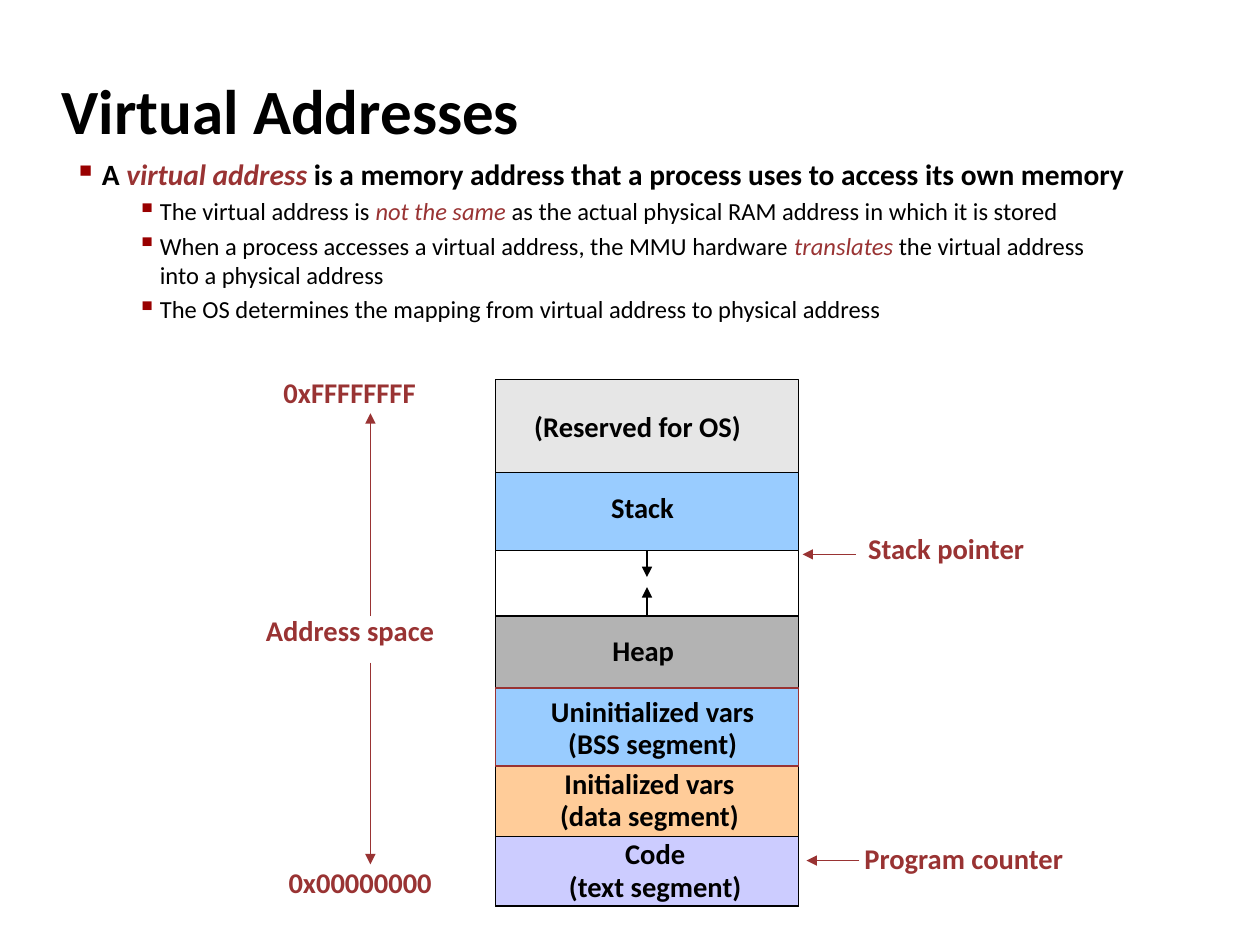
from dataclasses import dataclass
from itertools import accumulate

from lxml.etree import SubElement
from pptx import Presentation
from pptx.dml.color import RGBColor
from pptx.enum.shapes import MSO_CONNECTOR, MSO_SHAPE
from pptx.enum.text import MSO_ANCHOR, MSO_AUTO_SIZE, PP_ALIGN
from pptx.oxml.ns import qn
from pptx.util import Inches, Pt


@dataclass(frozen=True)
class Theme:
    """Colours, font and type sizes of the slide."""
    font: str = "Calibri"
    ink: str = "000000"
    accent: str = "993333"
    bullet: str = "990000"
    blue: str = "99CCFF"
    violet: str = "CCCCFF"
    orange: str = "FFCC99"
    grey: str = "B3B3B3"
    pale: str = "E6E6E6"
    title_size: float = 36
    point_size: float = 16.8
    detail_size: float = 14
    label_size: float = 16.3
    line_width: float = 0.75
    line_spacing: float = 0.94


class SlideBuilder:
    """Draws styled elements on the current slide."""

    def __init__(self, slide, theme):
        self.slide = slide
        self.theme = theme

    def run(self, paragraph, text, size, color, bold=True, italic=False):
        """Add one formatted run."""
        run = paragraph.add_run()
        run.text = text
        run.font.name = self.theme.font
        run.font.size = Pt(size)
        run.font.bold = bold
        run.font.italic = italic
        run.font.color.rgb = RGBColor.from_string(color)

    def title(self, text, left, top, width, height):
        """Place and fill the title placeholder."""
        heading = self.slide.shapes.title
        heading.left, heading.top = Inches(left), Inches(top)
        heading.width, heading.height = Inches(width), Inches(height)
        frame = heading.text_frame
        frame.auto_size = MSO_AUTO_SIZE.NONE
        frame.vertical_anchor = MSO_ANCHOR.MIDDLE
        paragraph = frame.paragraphs[0]
        paragraph.alignment = PP_ALIGN.LEFT
        paragraph.line_spacing = self.theme.line_spacing
        self.run(paragraph, text, self.theme.title_size, self.theme.ink)

    def text_frame(self, left, top, width, height):
        """Add a wrapping text box and return its frame."""
        frame = self.slide.shapes.add_textbox(
            Inches(left), Inches(top), Inches(width), Inches(height)).text_frame
        frame.word_wrap = True
        return frame

    def bullet(self, paragraph, level):
        """Give a paragraph the bullet and indent of its level."""
        margin, mark, percent = ((0.28, "■", 60), (0.74, "▪", 110))[level]
        paragraph.level = level
        properties = paragraph._p.get_or_add_pPr()
        properties.set("marL", str(Inches(margin)))
        properties.set("indent", str(Inches(-0.18)))
        spacing = SubElement(properties, qn("a:spcBef"))
        SubElement(spacing, qn("a:spcPct"), val="20000")
        color = SubElement(properties, qn("a:buClr"))
        SubElement(color, qn("a:srgbClr"), val=self.theme.bullet)
        SubElement(properties, qn("a:buSzPct"), val=str(percent * 1000))
        SubElement(properties, qn("a:buChar"), char=mark)

    def bullets(self, points, left, top, width, height):
        """Add points given as a level and parts, every second part stressed."""
        frame = self.text_frame(left, top, width, height)
        for index, (level, parts) in enumerate(points):
            paragraph = frame.add_paragraph() if index else frame.paragraphs[0]
            self.bullet(paragraph, level)
            size = self.theme.detail_size if level else self.theme.point_size
            for position, part in enumerate(parts):
                stressed = position % 2 == 1
                color = self.theme.accent if stressed else self.theme.ink
                self.run(paragraph, part, size, color, level == 0, stressed)

    def label(self, lines, left, top, width, color):
        """Add a bold label, centred when it has several lines."""
        frame = self.text_frame(left, top, width, 0.26 * len(lines))
        frame.margin_left = frame.margin_right = 0
        frame.margin_top = frame.margin_bottom = 0
        for index, line in enumerate(lines):
            paragraph = frame.add_paragraph() if index else frame.paragraphs[0]
            paragraph.alignment = PP_ALIGN.CENTER if len(lines) > 1 else PP_ALIGN.LEFT
            paragraph.line_spacing = self.theme.line_spacing
            self.run(paragraph, line, self.theme.label_size, color)

    def box(self, left, top, width, height, fill, line):
        """Add an outlined box, unfilled when fill is None."""
        box = self.slide.shapes.add_shape(
            MSO_SHAPE.ROUNDED_RECTANGLE,
            Inches(left), Inches(top), Inches(width), Inches(height))
        box.adjustments[0] = 0
        box.shadow.inherit = False
        if fill:
            box.fill.solid()
            box.fill.fore_color.rgb = RGBColor.from_string(fill)
        else:
            box.fill.background()
        box.line.color.rgb = RGBColor.from_string(line)
        box.line.width = Pt(self.theme.line_width)
        return box

    def arrow(self, start, end, color):
        """Add a straight arrow with its head at the end."""
        arrow = self.slide.shapes.add_connector(
            MSO_CONNECTOR.STRAIGHT, *map(Inches, start + end))
        arrow.line.color.rgb = RGBColor.from_string(color)
        arrow.line.width = Pt(self.theme.line_width)
        SubElement(arrow.line._get_or_add_ln(), qn("a:tailEnd"), type="triangle")
        SubElement(arrow._element.spPr, qn("a:effectLst"))
        return arrow


def draw_memory(builder):
    """Draw the stacked memory segments and the growth arrows."""
    theme = builder.theme
    left, top, width = 3.93, 3.01, 2.41
    segments = [
        (("(Reserved for OS)",), 0.74, theme.pale, theme.ink, (4.24, 0.26, 1.9)),
        (("Stack",), 0.62, theme.blue, theme.ink, (4.85, 0.16, 0.59)),
        ((), 0.52, None, None, None),
        (("Heap",), 0.57, theme.grey, theme.ink, (4.86, 0.16, 0.58)),
        (("Uninitialized vars", "(BSS segment)"), 0.62, theme.blue, theme.accent,
         (4.22, 0.07, 1.92)),
        (("Initialized vars", "(data segment)"), 0.56, theme.orange, theme.ink,
         (4.34, 0.02, 1.63)),
        (("Code", "(text segment)"), 0.55, theme.violet, theme.ink,
         (4.41, 0.02, 1.58)),
    ]
    edges = list(accumulate((segment[1] for segment in segments), initial=top))
    builder.box(left, top, width, edges[-1] - top, None, theme.ink)
    placed = [(edge, *segment) for edge, segment in zip(edges, segments) if segment[0]]
    boxes = {}
    for edge, lines, height, fill, line, _ in sorted(
            placed, key=lambda segment: segment[4] == theme.accent):
        boxes[lines[0]] = builder.box(left, edge, width, height, fill, line)
    for edge, lines, _, _, _, (label_left, offset, label_width) in placed:
        builder.label(lines, label_left, edge + offset, label_width, theme.ink)
    center = left + width / 2
    stack_growth = builder.arrow((center, edges[2]), (center, 4.58), theme.ink)
    stack_growth.begin_connect(boxes["Stack"], 2)
    heap_growth = builder.arrow((center, edges[3]), (center, 4.66), theme.ink)
    heap_growth.begin_connect(boxes["Heap"], 0)


def draw_annotations(builder):
    """Draw the address range and the pointers beside the memory."""
    accent = builder.theme.accent
    for text, left, top, width in (
            ("0xFFFFFFFF", 2.25, 3, 1.44),
            ("Address space", 2.11, 4.89, 1.61),
            ("0x00000000", 2.29, 6.89, 1.36),
            ("Stack pointer", 6.89, 4.24, 1.43),
            ("Program counter", 6.86, 6.7, 1.85)):
        builder.label((text,), left, top, width, accent)
    for start, end in (((2.94, 4.89), (2.94, 3.28)), ((2.94, 5.26), (2.94, 6.86)),
                       ((6.79, 4.4), (6.37, 4.4)), ((6.82, 6.83), (6.4, 6.83))):
        builder.arrow(start, end, accent)


def main():
    """Build and save the slide."""
    presentation = Presentation()
    presentation.slide_width, presentation.slide_height = Inches(10), Inches(7.5)
    slide = presentation.slides.add_slide(presentation.slide_layouts[5])
    builder = SlideBuilder(slide, Theme())
    builder.title("Virtual Addresses", 0.39, 0.48, 8.3, 0.83)
    builder.bullets([
        (0, ("A ", "virtual address",
             " is a memory address that a process uses to access its own memory")),
        (1, ("The virtual address is ", "not the same",
             " as the actual physical RAM address in which it is stored")),
        (1, ("When a process accesses a virtual address, the MMU hardware ",
             "translates", " the virtual address into a physical address")),
        (1, ("The OS determines the mapping from virtual address to physical address",)),
    ], 0.43, 1.19, 8.62, 1.81)
    draw_memory(builder)
    draw_annotations(builder)
    presentation.save("out.pptx")


if __name__ == "__main__":
    main()
